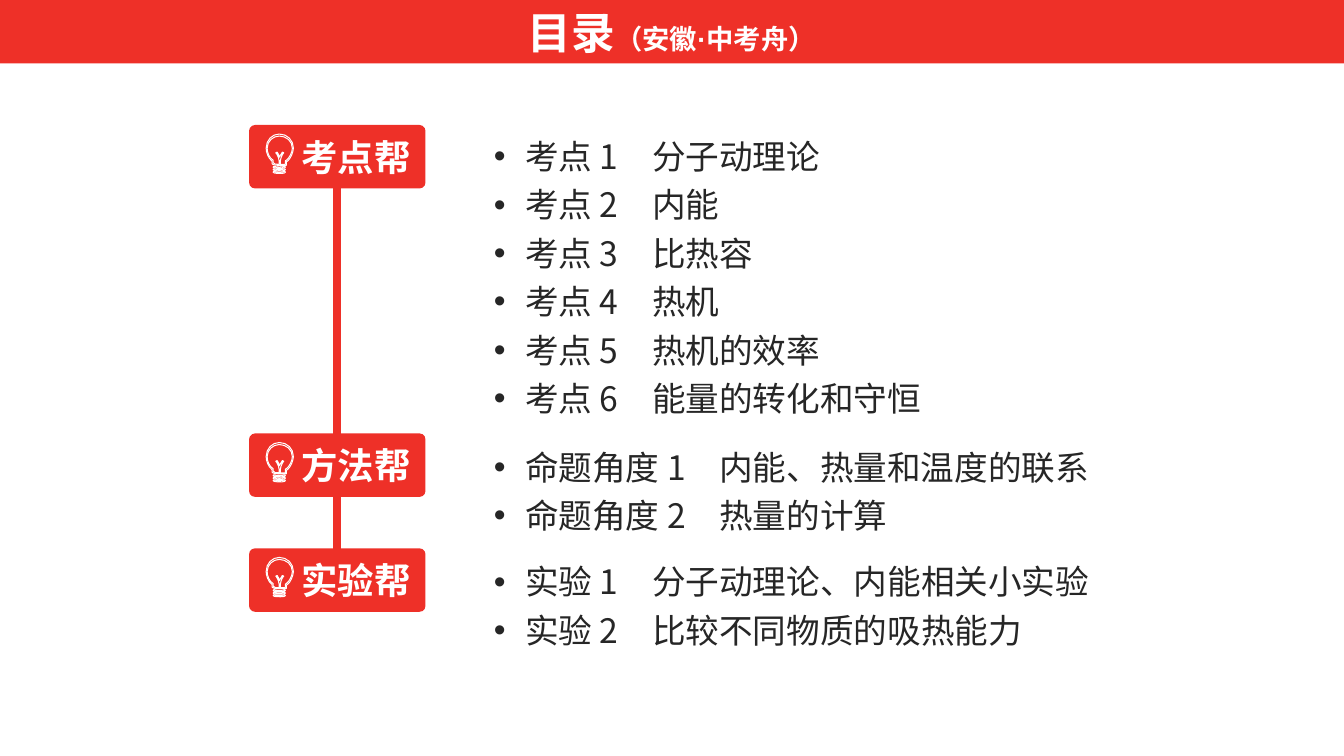
from dataclasses import dataclass

from lxml.etree import SubElement
from pptx import Presentation
from pptx.dml.color import RGBColor
from pptx.enum.shapes import MSO_CONNECTOR as Connector, MSO_SHAPE as Shape
from pptx.enum.text import MSO_ANCHOR as Anchor, MSO_AUTO_SIZE as AutoSize, PP_ALIGN as Align
from pptx.oxml.ns import qn
from pptx.util import Inches, Pt


@dataclass(frozen=True)
class Theme:
    """Colours, fonts and type sizes of the slide."""
    red: RGBColor = RGBColor(0xEE, 0x30, 0x28)
    white: RGBColor = RGBColor(0xFF, 0xFF, 0xFF)
    ink: RGBColor = RGBColor(0x26, 0x26, 0x26)
    heading_font: str = "Arial"
    cjk_font: str = "Noto Sans CJK SC"
    title_size: float = 31.2
    subtitle_size: float = 19.5
    badge_size: float = 26
    topic_size: float = 24


THEME = Theme()
PAGE_WIDTH, BAR_HEIGHT = 13.33, 0.63
BADGE_LEFT, BADGE_WIDTH, BADGE_HEIGHT = 2.47, 1.75, 0.63
TOPIC_LEFT = 4.8

SECTIONS = [
    dict(name="考点帮", top=1.24, topic_top=1.22, width=7.14, height=2.97, prefix="考点",
         topics=["分子动理论", "内能", "比热容", "热机", "热机的效率", "能量的转化和守恒"]),
    dict(name="方法帮", top=4.3, topic_top=4.3, width=7.14, height=1.03, prefix="命题角度",
         topics=["内能、热量和温度的联系", "热量的计算"]),
    dict(name="实验帮", top=5.44, topic_top=5.44, width=6.42, height=1.03, prefix="实验",
         topics=["分子动理论、内能相关小实验", "比较不同物质的吸热能力"]),
]

BULB_RING = [(8, 37), (9, 38), (17, 38), (18, 37), (19, 37), (19, 38), (19, 38),
             (18, 39), (16, 39), (14, 39), (11, 39), (8, 39), (7, 38),
             (7, 38), (7, 37), (8, 37)]
BULB_INNER = [(13, 2), (7, 2), (1, 7), (1, 14), (1, 18), (3, 24), (7, 26),
              (7, 26), (7, 26), (7, 28), (7, 29), (8, 29), (8, 29),
              (8, 30), (10, 30), (13, 30), (13, 30), (13, 29), (13, 29),
              (13, 25), (12, 22), (10, 19), (9, 19), (10, 18), (11, 18),
              (12, 20), (13, 21), (13, 23), (14, 21), (15, 20), (16, 18),
              (17, 18), (18, 19), (17, 19), (15, 22), (14, 25), (14, 29),
              (14, 29), (14, 30), (14, 30), (17, 30), (18, 30), (19, 30),
              (19, 29), (19, 29), (19, 28), (19, 27), (19, 26), (20, 26),
              (23, 24), (26, 18), (26, 14), (26, 7), (20, 2), (13, 2)]
BULB_OUTER = [(13, 0), (21, 0), (27, 6), (27, 14), (27, 18), (24, 25), (21, 27),
              (20, 27), (20, 28), (20, 28), (20, 30), (20, 31), (20, 31),
              (18, 31), (15, 31), (14, 31), (11, 31), (8, 31), (7, 30),
              (6, 30), (6, 30), (6, 28), (6, 28), (6, 27), (6, 27),
              (2, 24), (0, 18), (0, 14), (0, 6), (6, 0), (13, 0)]
BULB_RINGS = [[(x, y - lift) for x, y in BULB_RING] for lift in (0, 2.5, 5)]
BULB_CONTOURS = BULB_RINGS + [BULB_INNER, BULB_OUTER]


def apply(target, **values):
    """Set each named attribute on the target."""
    for name, value in values.items():
        setattr(target, name, value)


def paint(shape, fill):
    """Give a shape a plain fill without shadow or outline."""
    shape.shadow.inherit = False
    shape.fill.solid()
    shape.fill.fore_color.rgb = fill
    shape.line.fill.background()


def add_span(para, text, size, color, font, bold=False):
    """Append one formatted run to a paragraph."""
    span = para.add_run()
    span.text = text
    apply(span.font, name=font, size=Pt(size), bold=bold)
    span.font.color.rgb = color
    SubElement(span.font._element, qn("a:ea"), typeface=THEME.cjk_font)


def add_title(page, left, top, width, height):
    """Turn the title placeholder into the red header bar."""
    bar = page.shapes.title
    apply(bar, left=Inches(left), top=Inches(top), width=Inches(width), height=Inches(height))
    paint(bar, THEME.red)
    apply(bar.text_frame, vertical_anchor=Anchor.MIDDLE, auto_size=AutoSize.NONE, word_wrap=True)
    para = bar.text_frame.paragraphs[0]
    para.alignment = Align.CENTER
    for text, size in (("目录", THEME.title_size), ("（安徽·中考舟）", THEME.subtitle_size)):
        add_span(para, text, size, THEME.white, THEME.heading_font, bold=True)


def add_spine(page, x, top, bottom):
    """Draw the vertical line that joins the badges."""
    spine = page.shapes.add_connector(
        Connector.STRAIGHT, Inches(x), Inches(top), Inches(x), Inches(bottom))
    spine.line.color.rgb = THEME.red
    spine.line.width = Pt(6)
    SubElement(spine._element.spPr, qn("a:effectLst"))


def flatten(points, steps=4):
    """Turn a chain of cubic curves into a list of points."""
    flat = [points[0]]
    for start in range(0, len(points) - 1, 3):
        curve = points[start:start + 4]
        for step in range(1, steps + 1):
            t = step / steps
            weights = ((1 - t) ** 3, 3 * t * (1 - t) ** 2, 3 * t * t * (1 - t), t ** 3)
            flat.append(tuple(sum(w * p[axis] for w, p in zip(weights, curve))
                              for axis in (0, 1)))
    return flat


def add_bulb(shapes, left, top):
    """Draw the light bulb outline from its top left corner."""
    contours = [[(Inches(left + x / 100), Inches(top + y / 100)) for x, y in flatten(points)]
                for points in BULB_CONTOURS]
    builder = shapes.build_freeform(*contours[0][0])
    for index, contour in enumerate(contours):
        if index:
            builder.move_to(*contour[0])
        builder.add_line_segments(contour[1:], close=True)
    bulb = builder.convert_to_shape()
    paint(bulb, THEME.red)
    bulb.line.color.rgb = THEME.white
    bulb.line.width = Pt(0.75)


def add_badge(page, name, left, top, width, height):
    """Group a rounded section label with its bulb."""
    shapes = page.shapes.add_group_shape().shapes
    badge = shapes.add_shape(
        Shape.ROUNDED_RECTANGLE, Inches(left), Inches(top), Inches(width), Inches(height))
    badge.adjustments[0] = 0.095
    paint(badge, THEME.red)
    apply(badge.text_frame, vertical_anchor=Anchor.MIDDLE, margin_right=Inches(0.13), word_wrap=True)
    para = badge.text_frame.paragraphs[0]
    para.alignment = Align.RIGHT
    add_span(para, name, THEME.badge_size, THEME.white, THEME.heading_font, bold=True)
    add_bulb(shapes, left + 0.17, top + 0.09)


def add_topics(page, prefix, topics, left, top, width, height):
    """List the numbered topics of one section as bullets."""
    box = page.shapes.add_textbox(Inches(left), Inches(top), Inches(width), Inches(height))
    frame = box.text_frame
    apply(frame, word_wrap=True, auto_size=AutoSize.SHAPE_TO_FIT_TEXT)
    for number, topic in enumerate(topics, 1):
        para = frame.paragraphs[0] if number == 1 else frame.add_paragraph()
        para.line_spacing = 1.2
        properties = para._p.get_or_add_pPr()
        properties.set("marL", str(Inches(0.31)))
        properties.set("indent", str(-Inches(0.31)))
        SubElement(properties, qn("a:buFont"), typeface="Arial")
        SubElement(properties, qn("a:buChar"), char="•")
        add_span(para, f"{prefix} {number}　{topic}", THEME.topic_size, THEME.ink, THEME.cjk_font)


def add_contents_page(deck):
    """Build the contents page."""
    page = deck.slides.add_slide(deck.slide_layouts[5])
    add_title(page, 0, 0, PAGE_WIDTH, BAR_HEIGHT)
    add_spine(page, 3.34, 1.55, 5.45)
    for section in SECTIONS:
        add_badge(page, section["name"], BADGE_LEFT, section["top"], BADGE_WIDTH, BADGE_HEIGHT)
        add_topics(page, section["prefix"], section["topics"], TOPIC_LEFT,
                   section["topic_top"], section["width"], section["height"])


def main():
    """Create the deck and save it."""
    deck = Presentation()
    apply(deck, slide_width=Inches(PAGE_WIDTH), slide_height=Inches(7.5))
    add_contents_page(deck)
    deck.save("out.pptx")


if __name__ == "__main__":
    main()
